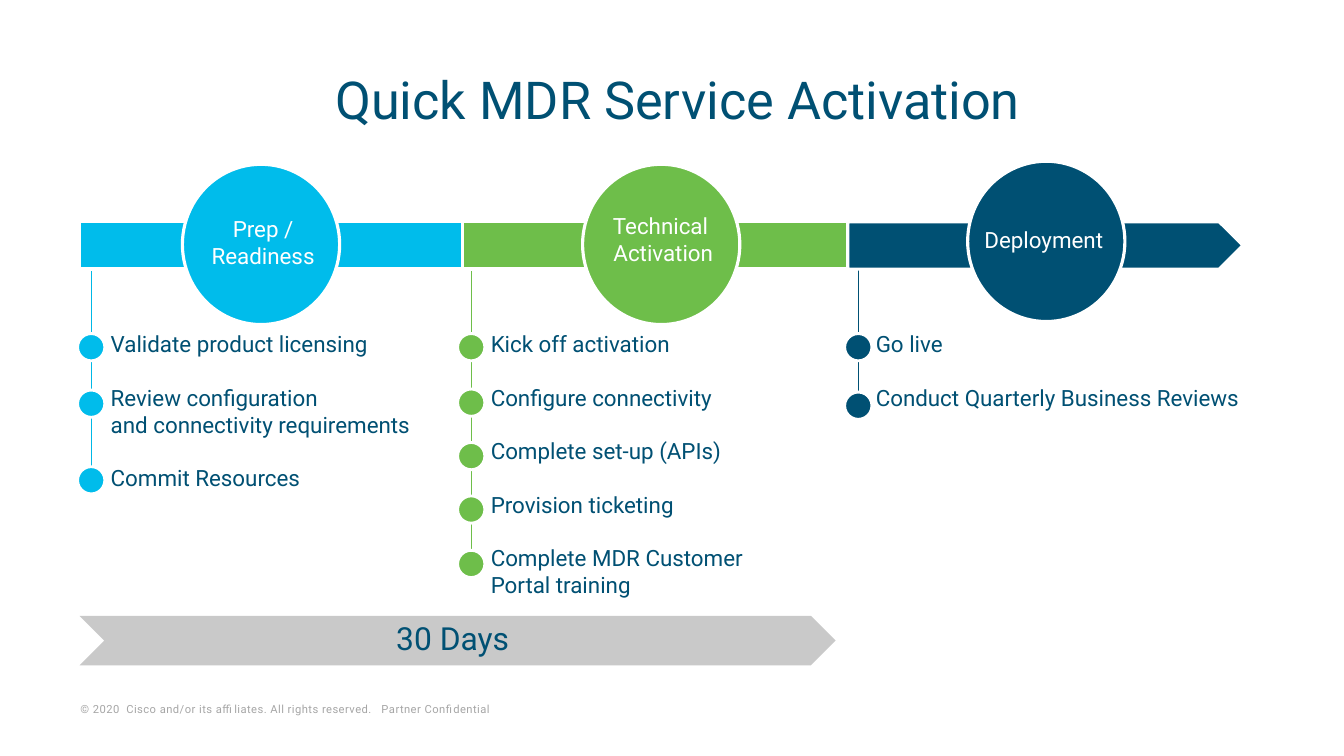
import copy

import pptx
import pptx.dml.color
import pptx.enum.shapes
import pptx.enum.text
import pptx.oxml.ns
import pptx.util

RGBColor = pptx.dml.color.RGBColor
SHAPE = pptx.enum.shapes.MSO_SHAPE
ALIGN = pptx.enum.text.PP_ALIGN
ANCHOR = pptx.enum.text.MSO_ANCHOR

SKY = RGBColor(0x00, 0xBC, 0xEB)
SKY_STEM = RGBColor(0x00, 0xB8, 0xE6)
GREEN = RGBColor(0x6E, 0xBE, 0x4A)
NAVY = RGBColor(0x00, 0x50, 0x73)
SILVER = RGBColor(0xC9, 0xC9, 0xC9)
GREY = RGBColor(0xA6, 0xA6, 0xA6)
WHITE = RGBColor(0xFF, 0xFF, 0xFF)

# The grid has square cells, ten to the inch
CELL = pptx.util.Inches(0.1)
COLUMNS, ROWS = 133.33, 75

BAR_ROW, BAR_HEIGHT = 22, 4.7
CIRCLE_WIDTH, CIRCLE_HEIGHT = 15.6, 15.9
STEM_ROW = 25
DOT = 2.7
LIST_ROW = 32.3

# bar and circle: (column, row, width, height) without the shared parts
PHASES = [
    dict(color=SKY, stem=SKY_STEM, bar=(7.9, 38.3), outline=SHAPE.RECTANGLE,
         circle=(18.1, 16.3), label="Prep / Readiness",
         label_at=(19.5, 20.9, 13.2, 6.4),
         dot_column=7.7, dot_rows=(33.1, 38.7, 46.3), list_at=(10, 33.8, 20.9),
         steps=["Validate product licensing",
                "Review configuration \vand connectivity requirements",
                "Commit Resources"]),
    dict(color=GREEN, stem=GREEN, bar=(45.9, 38.3), outline=SHAPE.RECTANGLE,
         circle=(57.8, 16.3), label="Technical \vActivation",
         label_at=(59.2, 20.6, 13.2, 6.4),
         dot_column=45.4, dot_rows=(33.1, 38.6, 43.9, 49.2, 54.6),
         list_at=(47.7, 32.5, 27.9),
         steps=["Kick off activation", "Configure connectivity",
                "Complete set-up (APIs)", "Provision ticketing",
                "Complete MDR Customer Portal training"]),
    dict(color=NAVY, stem=NAVY, bar=(84.1, 39.2), outline=SHAPE.PENTAGON,
         circle=(96, 16), label="Deployment",
         label_at=(96, 21.9, 15.1, 3.7),
         dot_column=83.8, dot_rows=(33.1, 38.9), list_at=(85.9, 39.3, 12.8),
         steps=["Go live", "Conduct Quarterly Business Reviews"]),
]


class GridSlide:
    font_name = "Roboto"

    def __init__(self, deck):
        self.page = deck.slides.add_slide(deck.slide_layouts[5])

    @staticmethod
    def cells(*counts):
        return [round(count * CELL) for count in counts]

    def style_text(self, frame, size, color, align=ALIGN.LEFT, anchor=ANCHOR.TOP,
                   gap=0, line_spacing=None, tracking=None):
        frame.word_wrap = True
        frame.auto_size = pptx.enum.text.MSO_AUTO_SIZE.NONE
        frame.vertical_anchor = anchor
        for index, para in enumerate(frame.paragraphs):
            para.alignment = align
            para.line_spacing = line_spacing
            if index:
                para.space_before = pptx.util.Pt(gap)
            for span in para.runs:
                span.font.name = self.font_name
                span.font.size = pptx.util.Pt(size)
                span.font.color.rgb = color
                if tracking:
                    span.font._element.set("spc", str(tracking))
            # Line breaks take the size of the text around them
            for line_break in para._p.findall(pptx.oxml.ns.qn("a:br")):
                line_break.insert(0, copy.deepcopy(para.runs[0].font._element))

    def title(self, text, at, size, color):
        box = self.page.shapes.title
        box.left, box.top, box.width, box.height = self.cells(*at)
        box.text_frame.text = text
        self.style_text(box.text_frame, size, color, ALIGN.CENTER,
                        ANCHOR.MIDDLE, line_spacing=0.8)

    def text(self, text, at, size, color, **style):
        box = self.page.shapes.add_textbox(*self.cells(*at))
        box.text_frame.text = text
        self.style_text(box.text_frame, size, color, **style)
        return box

    def shape(self, kind, at, fill, line_width=0):
        shape = self.page.shapes.add_shape(kind, *self.cells(*at))
        shape.shadow.inherit = False
        shape.fill.solid()
        shape.fill.fore_color.rgb = fill
        if line_width:
            shape.line.color.rgb = WHITE
            shape.line.width = pptx.util.Pt(line_width)
        else:
            shape.line.fill.background()
        return shape

    def stem(self, column, top, bottom, color):
        line = self.page.shapes.add_connector(
            pptx.enum.shapes.MSO_CONNECTOR.STRAIGHT,
            *self.cells(column, top, column, bottom))
        line.line.color.rgb = color
        line.line.width = pptx.util.Pt(0.75)
        line._element.spPr.append(pptx.oxml.parse_xml(
            "<a:effectLst %s/>" % pptx.oxml.ns.nsdecls("a")))

    def phase(self, phase):
        color = phase["color"]
        # Stem, bar and circle
        self.stem(phase["dot_column"] + DOT / 2, STEM_ROW,
                  phase["dot_rows"][-1] + DOT / 2, phase["stem"])
        column, width = phase["bar"]
        self.shape(phase["outline"], (column, BAR_ROW, width, BAR_HEIGHT), color, 2.25)
        self.shape(SHAPE.OVAL, (*phase["circle"], CIRCLE_WIDTH, CIRCLE_HEIGHT),
                   color, 2.25)
        self.text(phase["label"], phase["label_at"], 16, WHITE, align=ALIGN.CENTER)
        # Steps with their dots
        for row in phase["dot_rows"]:
            self.shape(SHAPE.OVAL, (phase["dot_column"], row, DOT, DOT), color, 2)
        column, width, height = phase["list_at"]
        self.text("\n".join(phase["steps"]), (column, LIST_ROW, width, height),
                  16, NAVY, gap=19)


def main():
    deck = pptx.Presentation()
    deck.slide_width = round(COLUMNS * CELL)
    deck.slide_height = ROWS * CELL
    slide = GridSlide(deck)

    # Title
    slide.title("Quick MDR Service Activation", (6.4, 5, 121.7, 10.7), 37.3, NAVY)

    # Phases
    for phase in PHASES:
        slide.phase(phase)

    # Duration arrow
    arrow = slide.shape(SHAPE.CHEVRON, (7.9, 61.1, 75, 4.9), SILVER)
    frame = arrow.text_frame
    frame.text = "30 Days"
    frame.margin_top = frame.margin_bottom = frame.margin_left = 0
    slide.style_text(frame, 22.7, NAVY, ALIGN.CENTER, ANCHOR.MIDDLE, line_spacing=0.9)

    # Copyright line
    footer = slide.text(
        "© 2020  Cisco and/or its affiliates. All rights reserved.   Partner Confidential",
        (7, 69.1, 49.6, 2.3), 8, GREY, anchor=ANCHOR.BOTTOM, tracking=30)
    footer.text_frame.margin_top = footer.text_frame.margin_bottom = pptx.util.Inches(0.04)

    deck.save("out.pptx")


if __name__ == "__main__":
    main()
